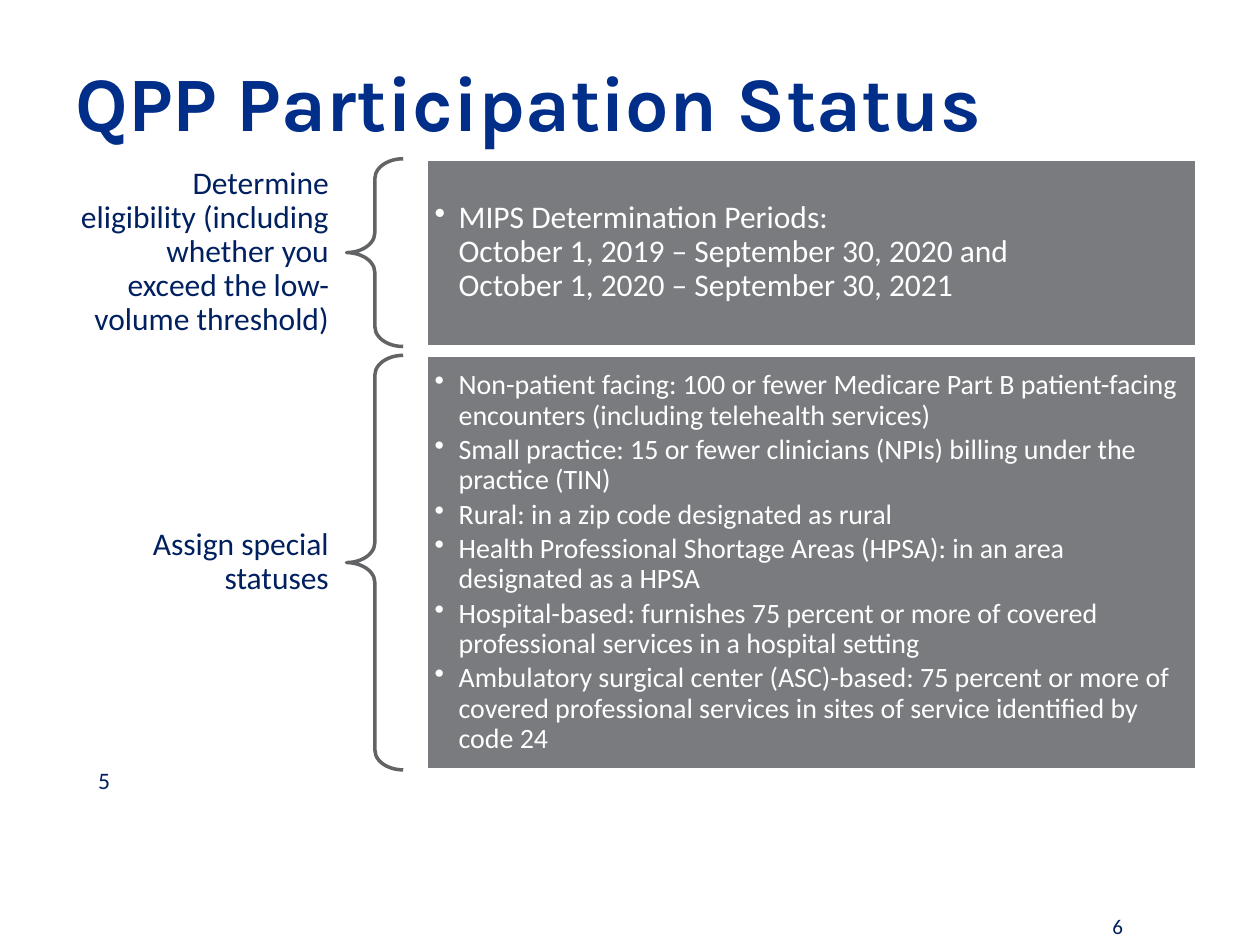
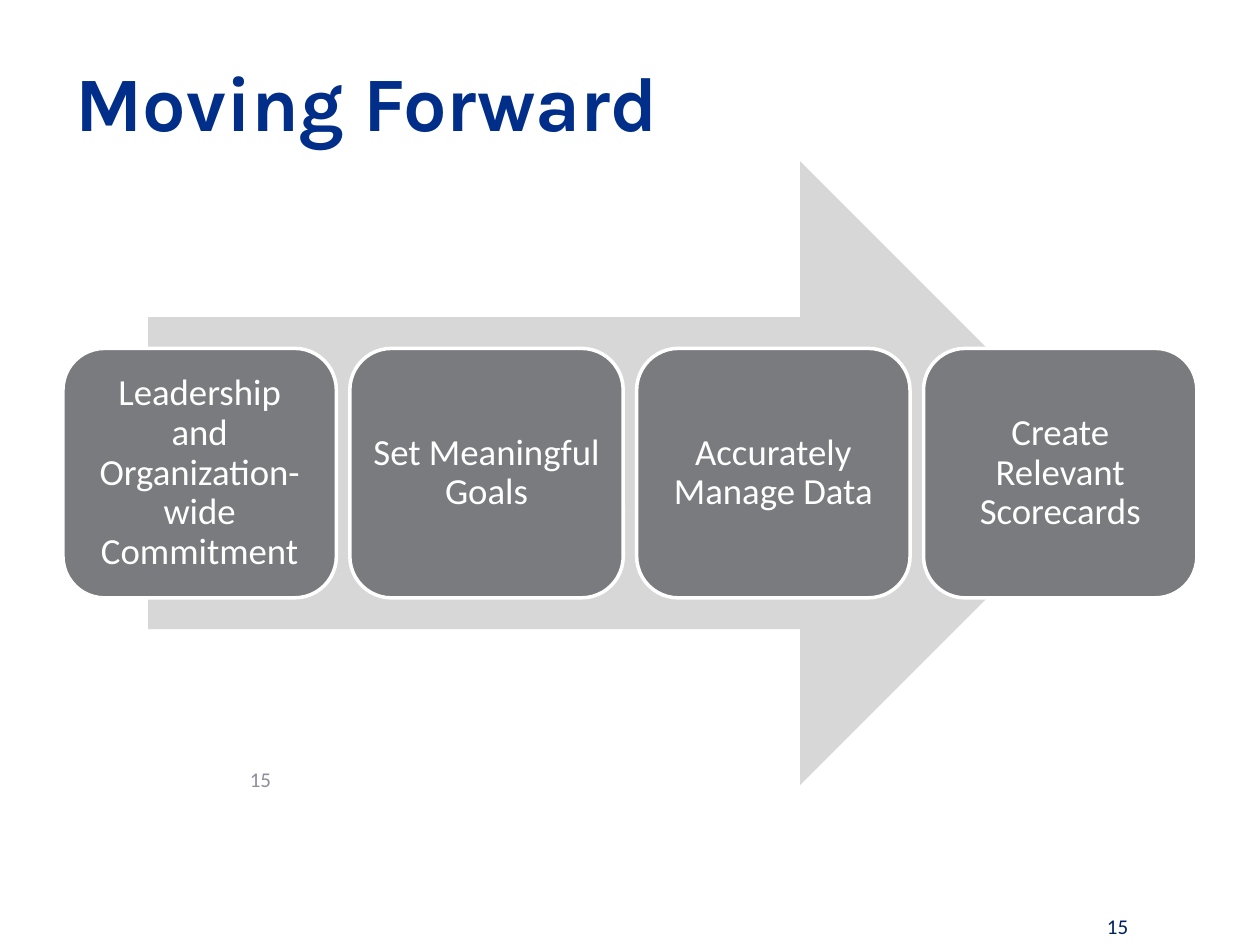
from lxml.etree import SubElement
from pptx import Presentation
from pptx.dml.color import RGBColor
from pptx.enum.shapes import MSO_SHAPE as Shape
from pptx.enum.text import MSO_ANCHOR as Anchor, PP_ALIGN as Align
from pptx.oxml.ns import qn
from pptx.util import Inches, Pt

# Content
STATUS = {
    "title": "QPP Participation Status", "page": "6", "inner_page": "5",
    "rows": [
        {"label": "Determine eligibility (including whether you exceed the "
                  "low-volume threshold)",
         "height": 1.49, "size": 18,
         "points": ["MIPS Determination Periods:\v"
                    "October 1, 2019 – September 30, 2020 and\v"
                    "October 1, 2020 – September 30, 2021"]},
        {"label": "Assign special statuses",
         "height": 3.29, "size": 16,
         "points": [
             "Non-patient facing: 100 or fewer Medicare Part B patient-facing "
             "encounters (including telehealth services)",
             "Small practice: 15 or fewer clinicians (NPIs) billing under the "
             "practice (TIN)",
             "Rural: in a zip code designated as rural",
             "Health Professional Shortage Areas (HPSA): in an area designated "
             "as a HPSA",
             "Hospital-based: furnishes 75 percent or more of covered "
             "professional services in a hospital setting",
             "Ambulatory surgical center (ASC)-based: 75 percent or more of "
             "covered professional services in sites of service identified by "
             "code 24"]},
    ],
}
FORWARD = {
    "title": "Moving Forward", "page": "15", "inner_page": "15",
    "steps": ["Leadership and Organization-wide Commitment",
              "Set Meaningful Goals", "Accurately Manage Data",
              "Create Relevant Scorecards"],
}

# Shared look
COLORS = {"title": "002E89", "navy": "002060", "panel": "797B7E",
          "brace": "616365", "arrow": "D7D7D8", "muted": "8C8D9D",
          "white": "FFFFFF"}
WIDTH, HEIGHT = 10, 7.5
LEFT, CONTENT = 0.05 * WIDTH, 0.9 * WIDTH
INNER_PAGE_TOP = 6.03
BULLET_INDENT = 0.19


def color(name):
    return RGBColor.from_string(COLORS[name])


def write(shape, lines, size, ink, font="Calibri", bold=False, align=Align.LEFT,
          anchor=Anchor.MIDDLE, inset=(0.1, 0.05), spacing=1.0, bullet=False):
    """Fill a shape with paragraphs in one style."""
    frame = shape.text_frame
    side, edge = (Inches(value) for value in inset)
    frame_format = {"word_wrap": True, "vertical_anchor": anchor,
                    "margin_left": side, "margin_right": side,
                    "margin_top": edge, "margin_bottom": edge}
    for name, value in frame_format.items():
        setattr(frame, name, value)
    for index, line in enumerate(lines):
        para = frame.paragraphs[0] if index == 0 else frame.add_paragraph()
        para.text = line
        para.alignment, para.line_spacing = align, spacing
        if bullet:
            para.space_after = Pt(0.15 * size)
            properties = para._p.get_or_add_pPr()
            properties.set("marL", str(Inches(BULLET_INDENT)))
            properties.set("indent", str(-Inches(BULLET_INDENT)))
            SubElement(properties, qn("a:buChar")).set("char", "•")
        for name, value in {"name": font, "size": Pt(size), "bold": bold}.items():
            setattr(para.font, name, value)
        para.font.color.rgb = color(ink)


def add_text(page, place, text, size, ink, **style):
    box = page.shapes.add_textbox(*map(Inches, place))
    write(box, [text], size, ink, **style)


def add_block(page, kind, place, fill=None, line=None):
    block = page.shapes.add_shape(kind, *map(Inches, place))
    block.shadow.inherit = False
    if fill:
        block.fill.solid()
        block.fill.fore_color.rgb = color(fill)
    else:
        block.fill.background()
    if line:
        block.line.color.rgb, block.line.width = color(line), Pt(2)
    else:
        block.line.fill.background()
    return block


def add_page(deck, content):
    """Add a blank slide with its title and page number."""
    page = deck.slides.add_slide(deck.slide_layouts[6])
    add_text(page, (8.58, 0.96 * HEIGHT, 0.58, 0.3), content["page"], 12, "navy",
             align=Align.CENTER)
    add_text(page, (LEFT, 0.17, CONTENT, 1.25), content["title"], 44, "title",
             font="Karla", bold=True)
    return page


def build_status(deck):
    page = add_page(deck, STATUS)
    # Columns as shares of the content width
    label_width, brace_width, panel_width = (
        share * CONTENT for share in (0.25, 0.05, 0.68))
    brace_left = LEFT + label_width
    panel_left = LEFT + CONTENT - panel_width
    top, gap = 1.26, 0.07
    for row in STATUS["rows"]:
        height = row["height"]
        add_text(page, (LEFT, top, label_width, height), row["label"], 18, "navy",
                 align=Align.RIGHT, inset=(0.14, 0.05), spacing=0.9)
        brace = add_block(page, Shape.LEFT_BRACE,
                          (brace_left, top, brace_width, height), line="brace")
        brace.adjustments[0] = 0.35
        panel = add_block(page, Shape.RECTANGLE,
                          (panel_left, top, panel_width, height), "panel", "white")
        write(panel, row["points"], row["size"], "white", inset=(0.07, 0.07),
              spacing=0.9, bullet=True)
        top += height + gap
    add_text(page, (0.68, INNER_PAGE_TOP, 2.25, 0.3), STATUS["inner_page"], 13.5,
             "navy", anchor=Anchor.TOP)


def build_forward(deck):
    page = add_page(deck, FORWARD)
    # Arrow behind the row of steps
    arrow_top, arrow_height, arrow_width = 1.28, 4.95, 0.85 * CONTENT
    add_block(page, Shape.RIGHT_ARROW,
              ((WIDTH - arrow_width) / 2, arrow_top, arrow_width, arrow_height),
              "arrow")
    # Equal cards, centred on the arrow
    steps = FORWARD["steps"]
    card_width, card_height = 2.17, 0.4 * arrow_height
    pitch = (CONTENT - card_width) / (len(steps) - 1)
    card_top = arrow_top + (arrow_height - card_height) / 2
    for column, step in enumerate(steps):
        card = add_block(page, Shape.ROUNDED_RECTANGLE,
                         (LEFT + column * pitch, card_top, card_width, card_height),
                         "panel", "white")
        write(card, [step], 21, "white", align=Align.CENTER, inset=(0.09, 0.09),
              spacing=0.9)
    add_text(page, (0, INNER_PAGE_TOP, 2.25, 0.3), FORWARD["inner_page"], 12,
             "muted", align=Align.RIGHT)


def main():
    deck = Presentation()
    deck.slide_width, deck.slide_height = Inches(WIDTH), Inches(HEIGHT)
    build_status(deck)
    build_forward(deck)
    deck.save("out.pptx")


if __name__ == "__main__":
    main()
